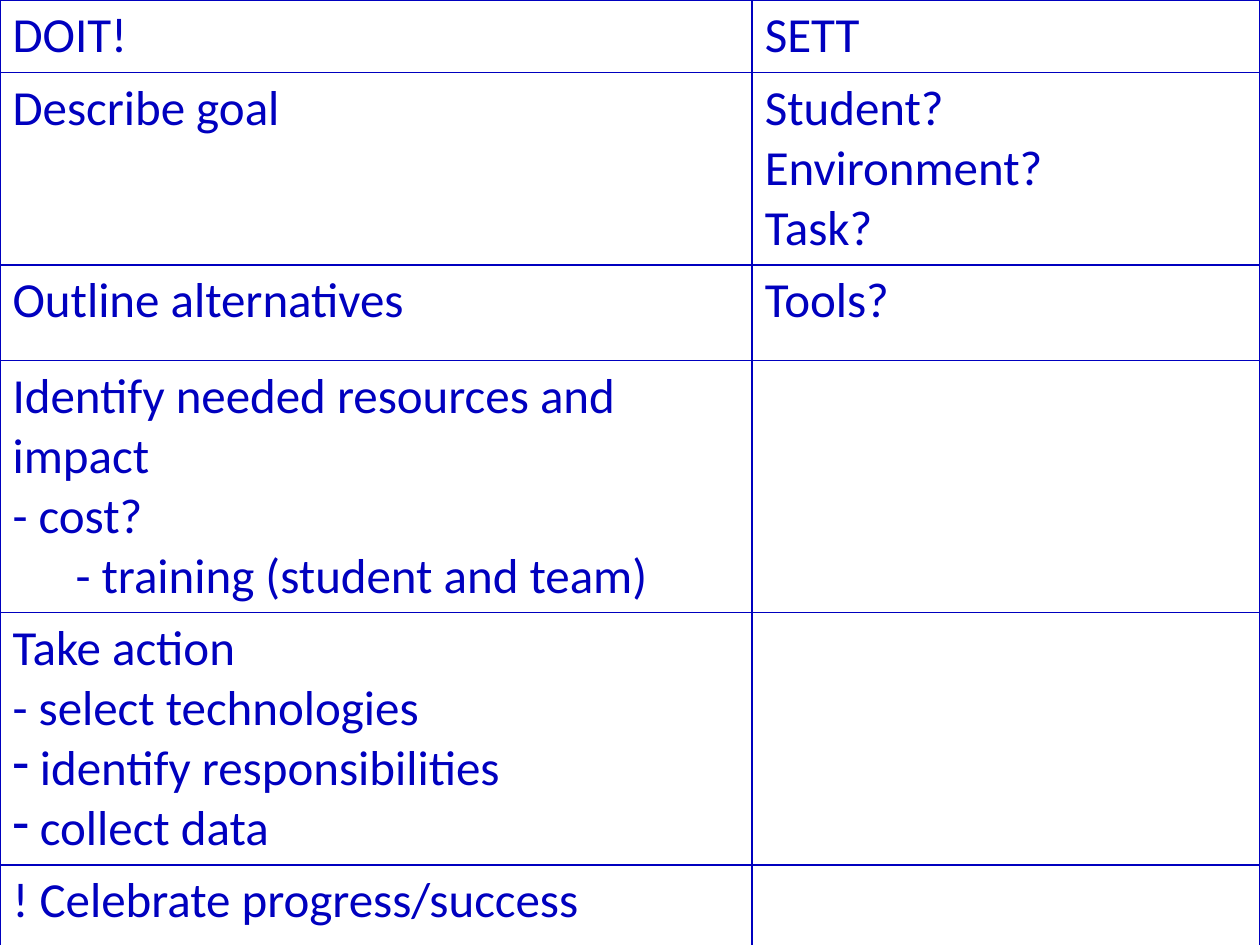
import pptx
import pptx.util
import pptx.dml.color
import pptx.oxml
import pptx.oxml.ns
from lxml import etree

THEME = {"font": "Calibri", "size": 28, "ink": "0000BF", "border": 1}
INK = pptx.dml.color.RGBColor.from_string(THEME["ink"])
BULLET, SUB = "bullet", "sub"

# Each cell lists its paragraphs; a pair carries a paragraph style
ROWS = [
    (0.57, ["DOIT!"], ["SETT"]),
    (1.33, ["Describe goal"], ["Student?", "Environment?", "Task?"]),
    (0.76, ["Outline alternatives"], ["Tools?"]),
    (1.74, ["Identify needed resources and impact", "- cost?",
            ("- training (student and team)", SUB)], []),
    (1.52, ["Take action", "- select technologies",
            (" identify responsibilities", BULLET),
            (" collect data", BULLET)], []),
    (1.16, ["! Celebrate progress/success"], []),
]
LEFT_SHARE = 0.597


def add_child(parent, tag, **attrs):
    return etree.SubElement(parent, pptx.oxml.ns.qn(tag), **attrs)


def format_cell(cell, lines):
    # Borders come before the fill in the cell properties
    tcPr = cell._tc.get_or_add_tcPr()
    width = str(pptx.util.Pt(THEME["border"]))
    for side in ("a:lnL", "a:lnR", "a:lnT", "a:lnB"):
        fill = add_child(add_child(tcPr, side, w=width), "a:solidFill")
        add_child(fill, "a:srgbClr", val=THEME["ink"])
    cell.fill.background()

    # Paragraphs
    tf = cell.text_frame
    for i, line in enumerate(lines):
        text, style = line if isinstance(line, tuple) else (line, None)
        p = tf.paragraphs[0] if i == 0 else tf.add_paragraph()
        p.text = text
        font = p.runs[0].font
        font.name, font.size = THEME["font"], pptx.util.Pt(THEME["size"])
        font.color.rgb = INK
        if style == SUB:
            p.level = 1
            pPr = p._p.get_or_add_pPr()
            pPr.set("marL", str(pptx.util.Inches(0.5)))
            pPr.set("indent", "0")
        elif style == BULLET:
            pPr = p._p.get_or_add_pPr()
            add_child(pPr, "a:buChar", char="-")


# Slide
prs = pptx.Presentation()
prs.slide_width = pptx.util.Inches(10)
prs.slide_height = pptx.util.Inches(7.5)
s = prs.slides.add_slide(prs.slide_layouts[6])

# Comparison table across the full slide width
height = pptx.util.Inches(sum(row[0] for row in ROWS))
table = s.shapes.add_table(len(ROWS), 2, 0, 0, prs.slide_width, height).table
table.first_row = table.horz_banding = False
table.columns[0].width = int(prs.slide_width * LEFT_SHARE)
table.columns[1].width = prs.slide_width - table.columns[0].width

for r, (row_height, *cells) in enumerate(ROWS):
    table.rows[r].height = pptx.util.Inches(row_height)
    for c, lines in enumerate(cells):
        format_cell(table.cell(r, c), lines)

prs.save("out.pptx")
